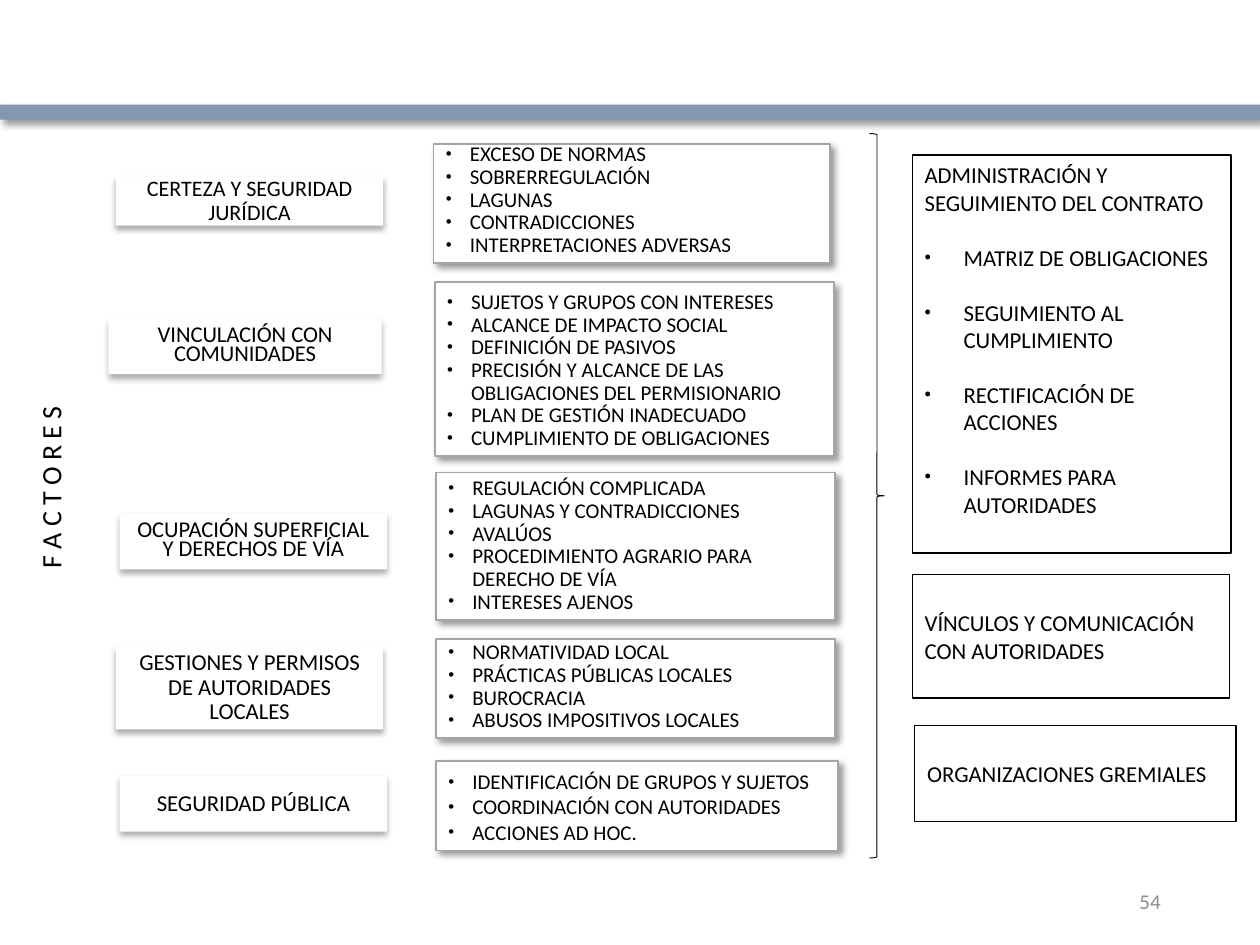
import pptx
import pptx.util
import pptx.dml.color
import pptx.enum.shapes
import pptx.enum.text
import pptx.oxml
import pptx.oxml.ns
import lxml.etree

Inches = pptx.util.Inches
Pt = pptx.util.Pt
SHAPE = pptx.enum.shapes.MSO_SHAPE
ALIGN = pptx.enum.text.PP_ALIGN
ANCHOR = pptx.enum.text.MSO_ANCHOR

SOFT_SHADOW = (32, 3.5, 2.2, 90)
DEEP_SHADOW = (40, 4, 3, 45)

FACTORS = [
    ("CERTEZA Y SEGURIDAD JURÍDICA", (0.92, 1.4, 2.12, 0.39), 12.6, 0.9),
    ("VINCULACIÓN CON COMUNIDADES", (0.86, 2.53, 2.17, 0.44), 12.9, 0.7),
    ("OCUPACIÓN SUPERFICIAL Y DERECHOS DE VÍA", (0.95, 4.08, 2.12, 0.44), 12.9, 0.7),
    ("GESTIONES Y PERMISOS DE AUTORIDADES LOCALES", (0.92, 5.13, 2.12, 0.66), 13, 0.9),
    ("SEGURIDAD PÚBLICA", (0.95, 6.16, 2.12, 0.44), 13, 0.9),
]

DETAILS = [
    ((3.44, 1.14, 3.15, 0.95), 0.9,
     ["EXCESO DE NORMAS", "SOBRERREGULACIÓN", "LAGUNAS", "CONTRADICCIONES",
      "INTERPRETACIONES ADVERSAS"]),
    ((3.45, 2.24, 3.17, 1.38), 0.9,
     ["SUJETOS Y GRUPOS CON INTERESES", "ALCANCE DE IMPACTO SOCIAL",
      "DEFINICIÓN DE PASIVOS",
      "PRECISIÓN Y ALCANCE DE LAS OBLIGACIONES DEL PERMISIONARIO",
      "PLAN DE GESTIÓN INADECUADO", "CUMPLIMIENTO DE OBLIGACIONES"]),
    ((3.46, 3.75, 3.17, 1.17), 0.9,
     ["REGULACIÓN COMPLICADA", "LAGUNAS Y CONTRADICCIONES", "AVALÚOS",
      "PROCEDIMIENTO AGRARIO PARA DERECHO DE VÍA", "INTERESES AJENOS"]),
    ((3.46, 5.07, 3.17, 0.79), 0.9,
     ["NORMATIVIDAD LOCAL", "PRÁCTICAS PÚBLICAS LOCALES", "BUROCRACIA",
      "ABUSOS IMPOSITIVOS LOCALES"]),
    ((3.46, 6.04, 3.19, 0.71), 1.0,
     ["IDENTIFICACIÓN DE GRUPOS Y SUJETOS", "COORDINACIÓN CON AUTORIDADES",
      "ACCIONES AD HOC."]),
]

CONTRACT_TITLE = "ADMINISTRACIÓN Y SEGUIMIENTO DEL CONTRATO"
CONTRACT_TASKS = ["MATRIZ DE OBLIGACIONES", "SEGUIMIENTO AL CUMPLIMIENTO",
                  "RECTIFICACIÓN DE ACCIONES", "INFORMES PARA AUTORIDADES"]

LINKS = [
    ("VÍNCULOS Y COMUNICACIÓN CON AUTORIDADES", (7.24, 4.56, 2.52, 0.98)),
    ("ORGANIZACIONES GREMIALES", (7.26, 5.76, 2.55, 0.76)),
]


def rgb(color):
    return pptx.dml.color.RGBColor.from_string(color)


def add_shadow(shape, opacity, blur, distance, angle):
    effects = shape._element.spPr.find(pptx.oxml.ns.qn("a:effectLst"))
    shadow = lxml.etree.SubElement(
        effects, pptx.oxml.ns.qn("a:outerShdw"), blurRad=str(Pt(blur)),
        dist=str(Pt(distance)), dir=str(angle * 60000), algn="ctr", rotWithShape="0")
    color = lxml.etree.SubElement(shadow, pptx.oxml.ns.qn("a:srgbClr"), val="000000")
    lxml.etree.SubElement(color, pptx.oxml.ns.qn("a:alpha"), val=str(opacity * 1000))


def add_box(slide, place, kind=SHAPE.RECTANGLE, fill=None, line=None, width=0.75,
            shadow=None, anchor=ANCHOR.MIDDLE):
    box = slide.shapes.add_shape(kind, *map(Inches, place))
    box.shadow.inherit = False
    if fill:
        box.fill.solid()
        box.fill.fore_color.rgb = rgb(fill)
    else:
        box.fill.background()
    if line:
        box.line.color.rgb = rgb(line)
        box.line.width = Pt(width)
    else:
        box.line.fill.background()
    if shadow:
        add_shadow(box, *shadow)
    box.text_frame.word_wrap = True
    box.text_frame.vertical_anchor = anchor
    return box


def add_bullet(para, indent):
    properties = para._p.get_or_add_pPr()
    properties.set("marL", str(Inches(indent)))
    properties.set("indent", str(-Inches(indent)))
    for tag, name, value in (("a:buSzPct", "val", "80000"),
                             ("a:buFont", "typeface", "Arial"),
                             ("a:buChar", "char", "•")):
        lxml.etree.SubElement(properties, pptx.oxml.ns.qn(tag)).set(name, value)


def write(para, text, size, align=ALIGN.LEFT, color="000000", spacing=1.0, indent=None):
    if indent:
        add_bullet(para, indent)
    para.text = text
    para.alignment = align
    para.line_spacing = spacing
    para.font.name = "Calibri"
    para.font.size = Pt(size)
    para.font.color.rgb = rgb(color)


def add_factor(slide, text, place, size, spacing):
    box = add_box(slide, place, fill="FFFFFF", shadow=SOFT_SHADOW)
    write(box.text_frame.paragraphs[0], text, size, ALIGN.CENTER, spacing=spacing)


def add_details(slide, place, spacing, items):
    box = add_box(slide, place, fill="FFFFFF", line="A5A5A5", width=1,
                  shadow=DEEP_SHADOW, anchor=ANCHOR.BOTTOM)
    frame = box.text_frame
    for index, item in enumerate(items):
        para = frame.add_paragraph() if index else frame.paragraphs[0]
        write(para, item, 12, spacing=spacing, indent=0.19)


def add_contract(slide):
    box = add_box(slide, (7.24, 1.23, 2.53, 3.16), line="000000", anchor=ANCHOR.TOP)
    write(box.text_frame.paragraphs[0], CONTRACT_TITLE, 13)
    for task in CONTRACT_TASKS:
        para = box.text_frame.add_paragraph()
        write(para, task, 13, indent=0.31)
        para.space_before = Pt(15.8)


def add_link(slide, text, place):
    box = add_box(slide, place, line="000000")
    write(box.text_frame.paragraphs[0], text, 13)


def add_side_title(slide):
    box = add_box(slide, (0.19, 1.32, 0.52, 5.1), SHAPE.ROUNDED_RECTANGLE,
                  line="FFFFFF", anchor=ANCHOR.TOP)
    box.text_frame._txBody.bodyPr.set("vert", "vert270")
    write(box.text_frame.paragraphs[0], "F A C T O R E S", 16, ALIGN.CENTER)


def add_page_number(slide):
    box = slide.shapes.add_textbox(*map(Inches, (7.06, 6.95, 2.25, 0.4)))
    box.text_frame.word_wrap = True
    box.text_frame.vertical_anchor = ANCHOR.MIDDLE
    write(box.text_frame.paragraphs[0], "54", 12, ALIGN.RIGHT, "8C8C8C")


def main():
    deck = pptx.Presentation()
    deck.slide_width = Inches(10)
    deck.slide_height = Inches(7.5)
    slide = deck.slides.add_slide(deck.slide_layouts[6])
    add_box(slide, (0, 0.83, 10, 0.12), fill="8497B0", shadow=DEEP_SHADOW)
    for factor in FACTORS:
        add_factor(slide, *factor)
    for details in DETAILS:
        add_details(slide, *details)
    add_contract(slide)
    for link in LINKS:
        add_link(slide, *link)
    add_box(slide, (6.9, 1.06, 0.12, 5.75), SHAPE.RIGHT_BRACE, line="000000", width=0.5)
    add_side_title(slide)
    add_page_number(slide)
    deck.save("out.pptx")


if __name__ == "__main__":
    main()
